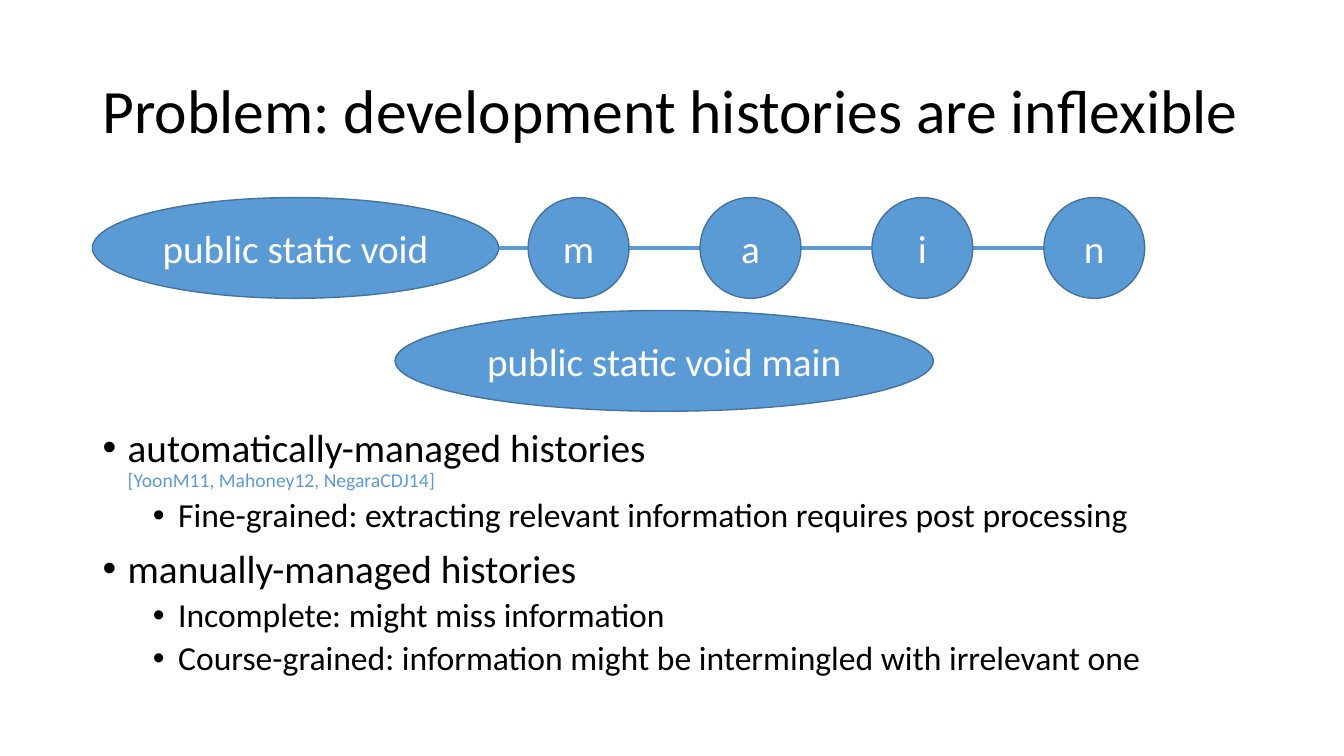
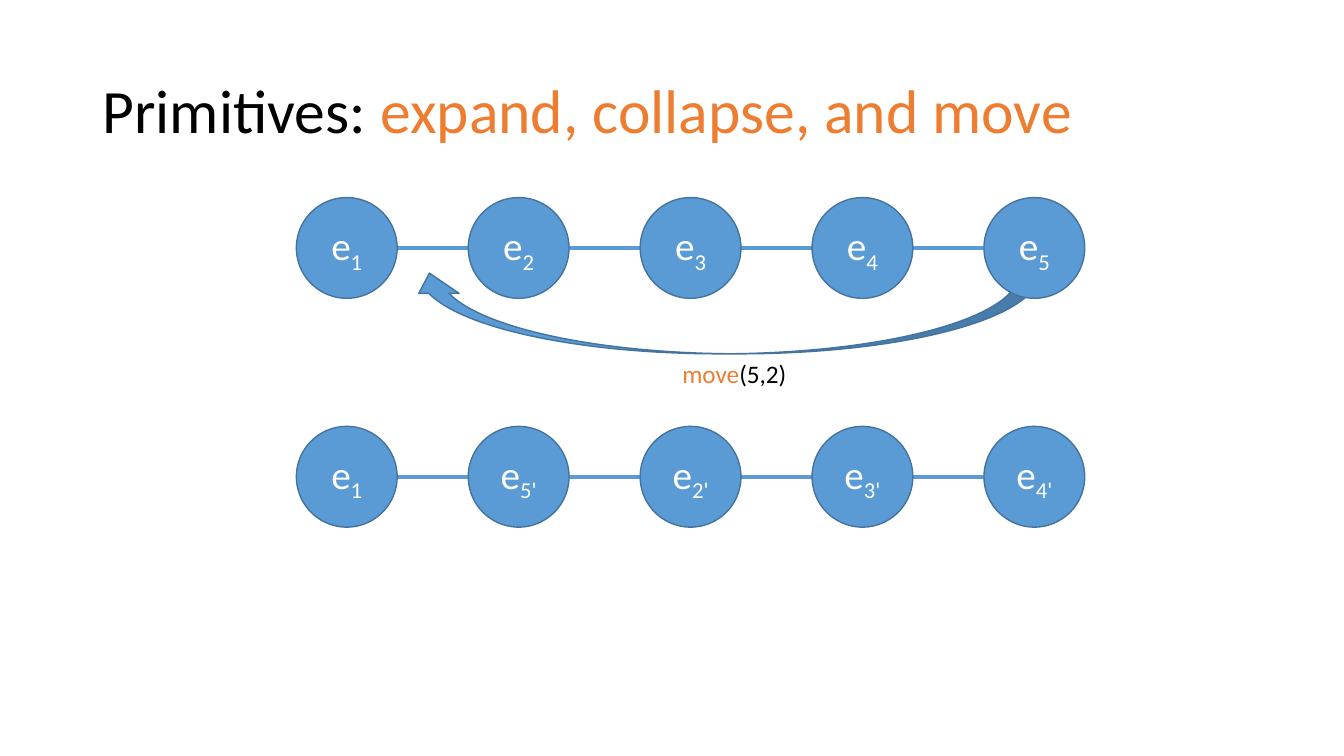
"""Build two slides about development histories and their edit primitives."""
from pptx import Presentation, util as u
from pptx.dml import color
from pptx.enum import shapes, text
from pptx.oxml import parse_xml
from pptx.oxml.ns import nsdecls, qn

BLUE, EDGE, ORANGE, BLACK, WHITE = "5B9BD5", "43739E", "ED7D31", "000000", "FFFFFF"
LEFT, WIDTH = 6.88, 86.25
NODE_W, NODE_H, PITCH = 7.5, 13.33, 12.79
ROW_1, ROW_2, ROW_3 = 26.13, 41.07, 56.4
FIRST, CHARS = 22.05, 39.3

prs = Presentation()
prs.slide_width, prs.slide_height = u.Inches(13.33), u.Inches(7.5)
rgb = color.RGBColor.from_string


def box(x, y, w, h):
    """Turn percentages of the slide's size into lengths."""
    return [int(v * side / 100) for v, side in
            zip((x, y, w, h), (prs.slide_width, prs.slide_height) * 2)]


def write(p, words, size=28, fill=BLACK, base=0):
    """Add a formatted run to a paragraph."""
    r = p.add_run()
    r.text = words
    r.font.name, r.font.size = "Calibri", u.Pt(size)
    r.font.color.rgb = rgb(fill)
    if base:
        r._r.get_or_add_rPr().set("baseline", str(base * 1000))


body_style = prs.slide_master.element.find(".//" + qn("p:bodyStyle"))
for level, size, margin in ((1, 28, 0.25), (2, 24, 0.75)):
    style = body_style.find(qn(f"a:lvl{level}pPr"))
    style.set("marL", str(u.Inches(margin)))
    style.set("indent", str(u.Inches(-0.25)))
    style.find(qn("a:buChar")).set("char", "•")
    style.find(qn("a:defRPr")).set("sz", str(size * 100))

slides = []
for layout, plain, accent in (
        (1, "Problem: development histories are inflexible", ""),
        (5, "Primitives: ", "expand, collapse, and move")):
    s = prs.slides.add_slide(prs.slide_layouts[layout])
    slides.append(s)
    title = s.shapes.title
    title.left, title.top, title.width, title.height = box(LEFT, 5.33, WIDTH, 19.33)
    tf = title.text_frame
    tf.auto_size, tf.vertical_anchor = text.MSO_AUTO_SIZE.NONE, text.MSO_ANCHOR.MIDDLE
    p = tf.paragraphs[0]
    p.alignment, p.line_spacing = text.PP_ALIGN.LEFT, 0.9
    write(p, plain, 44)
    if accent:
        write(p, accent, 44, ORANGE)
problem, primitives = slides

body = problem.placeholders[1]
body.left, body.top, body.width, body.height = box(LEFT, 56, WIDTH, 36.27)
tf = body.text_frame
tf.auto_size = text.MSO_AUTO_SIZE.NONE
for i, (level, words, cite) in enumerate((
        (0, "automatically-managed histories", "[YoonM11, Mahoney12, NegaraCDJ14]"),
        (1, "Fine-grained: extracting relevant information requires post processing", ""),
        (0, "manually-managed histories", ""),
        (1, "Incomplete: might miss information", ""),
        (1, "Course-grained: information might be intermingled with irrelevant one", ""))):
    p = tf.add_paragraph() if i else tf.paragraphs[0]
    p.level, p.line_spacing, p.space_before = level, 0.9, u.Pt((10, 5)[level])
    write(p, words, (28, 24)[level])
    if cite:
        p.add_line_break()
        write(p, cite, 14, BLUE)

arrow = primitives.shapes.add_shape(
    shapes.MSO_SHAPE.CURVED_UP_ARROW, *box(30.45, 36.13, 46.88, 10.67))
arrow.element.spPr.find(qn("a:xfrm")).set("flipH", "1")
ovals = [arrow]

links, nodes = [], []
for parent, x, y, labels in (
        (problem.shapes, CHARS, ROW_1, ("m", "a", "i", "n")),
        (primitives.shapes.add_group_shape().shapes, FIRST, ROW_1,
         ("e 1", "e 2", "e 3", "e 4", "e 5")),
        (primitives.shapes.add_group_shape().shapes, FIRST, ROW_3,
         ("e 1", "e 5'", "e 2'", "e 3'", "e 4'"))):
    for i, label in enumerate(labels):
        left = x + i * PITCH
        nodes.append((parent, left, y, NODE_W, label.split()))
        if i:
            links.append((parent, left - PITCH + NODE_W, left, y))
links.append((problem.shapes, LEFT, CHARS, ROW_1))
nodes.append((problem.shapes, LEFT, ROW_1, 30.22, ["public static void"]))
nodes.append((problem.shapes, 29.4, ROW_2, 40.05, ["public static void main"]))

for parent, start, end, y in links:
    x1, mid, x2, _ = box(start, y + NODE_H / 2, end, 0)
    link = parent.add_connector(shapes.MSO_CONNECTOR.STRAIGHT, x1, mid, x2, mid)
    link.line.color.rgb, link.line.width = rgb(BLUE), u.Pt(3)
    link._element.spPr.append(parse_xml(f"<a:effectLst {nsdecls('a')}/>"))

for parent, x, y, w, label in nodes:
    sp = parent.add_shape(shapes.MSO_SHAPE.OVAL, *box(x, y, w, NODE_H))
    ovals.append(sp)
    tf = sp.text_frame
    tf.vertical_anchor = text.MSO_ANCHOR.MIDDLE
    p = tf.paragraphs[0]
    p.alignment = text.PP_ALIGN.CENTER
    for words, base in zip(label, (0, -25)):
        write(p, words, fill=WHITE, base=base)

for sp in ovals:
    sp.shadow.inherit = False
    sp.fill.solid()
    sp.fill.fore_color.rgb = rgb(BLUE)
    sp.line.color.rgb, sp.line.width = rgb(EDGE), u.Pt(1)

tf = primitives.shapes.add_textbox(*box(50.03, 46.67, 9.38, 5.33)).text_frame
tf.word_wrap, tf.auto_size = False, text.MSO_AUTO_SIZE.SHAPE_TO_FIT_TEXT
p = tf.paragraphs[0]
write(p, "move", 18, ORANGE)
write(p, "(5,2)", 18)

prs.save("out.pptx")
